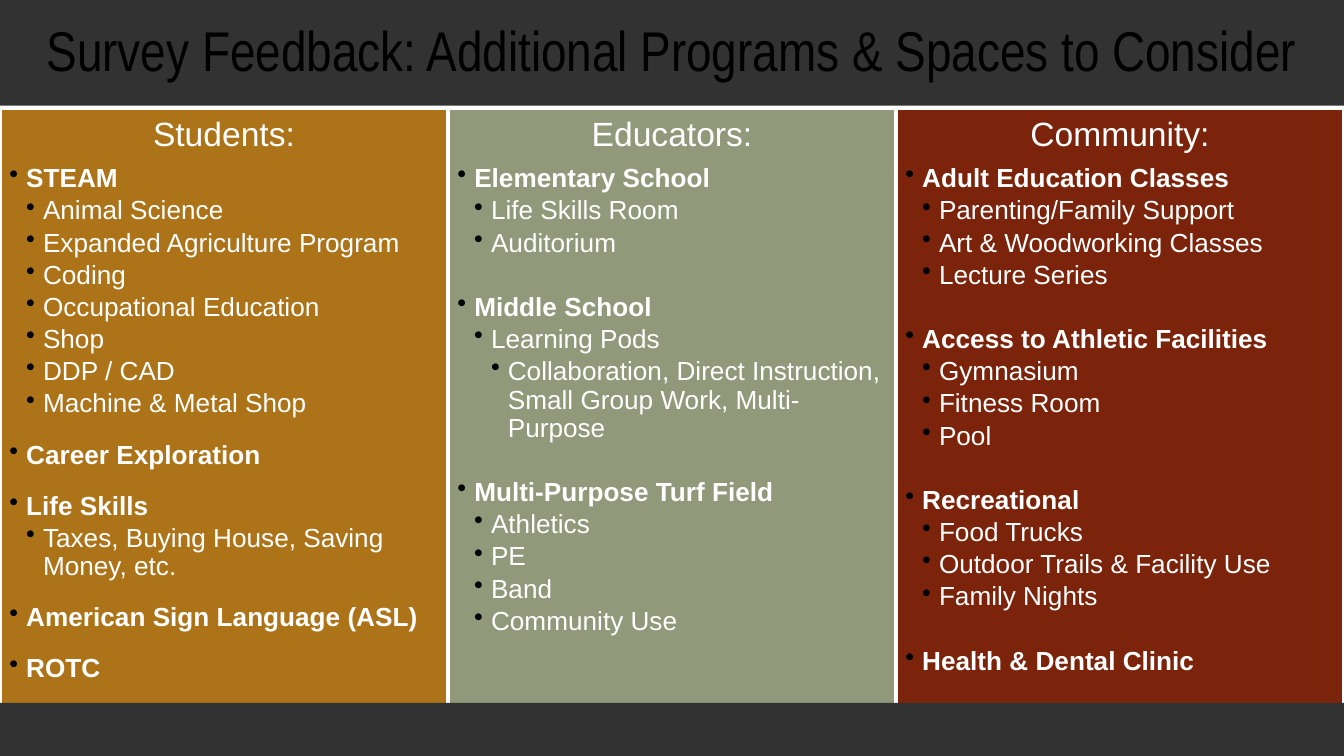
"""Build the survey feedback slide with one column of ideas per audience."""
from dataclasses import dataclass

from lxml import etree
from pptx import Presentation, util as u
from pptx.dml.color import RGBColor
from pptx.enum import shapes, text
from pptx.oxml.ns import qn


@dataclass(frozen=True)
class Theme:
    bar: str = "323232"
    ink: str = "000000"
    light: str = "FFFFFF"
    title_font: str = "Arial Narrow"
    body_font: str = "Arial"
    title_size: float = 30
    heading_size: float = 18
    body_size: float = 14
    tight: float = 0.9
    loose: float = 1.5
    heading_after: float = 0.35
    item_after: float = 0.15
    group_gap: float = 17.2
    indent: float = 0.125


@dataclass(frozen=True)
class Item:
    label: str
    level: int = 2
    spacing: float = 0.9
    before: float = 0


@dataclass(frozen=True)
class Column:
    heading: str
    fill: str
    items: list[Item]


THEME = Theme()
WIDTH, HEIGHT = u.Inches(10), u.Inches(5.625)
ROWS = 100


def topic(label: str, *details: str, spacing: float = THEME.tight, before: float = 0) -> list[Item]:
    """Return a bold topic followed by its details."""
    return [Item(label, 1, spacing, before), *(Item(d) for d in details)]


def spaced(label: str, *details: str) -> list[Item]:
    """Return a topic set in loose line spacing."""
    return topic(label, *details, spacing=THEME.loose)


def apart(label: str, *details: str) -> list[Item]:
    """Return a topic set a full line below the previous one."""
    return topic(label, *details, before=THEME.group_gap)


COLUMNS = [
    Column("Students:", "AD7318", [
        *topic("STEAM", "Animal Science", "Expanded Agriculture Program", "Coding",
               "Occupational Education", "Shop", "DDP / CAD", "Machine & Metal Shop"),
        *spaced("Career Exploration"),
        *spaced("Life Skills", "Taxes, Buying House, Saving Money, etc."),
        *spaced("American Sign Language (ASL)"),
        *spaced("ROTC"),
    ]),
    Column("Educators:", "92987A", [
        *topic("Elementary School", "Life Skills Room", "Auditorium"),
        *apart("Middle School", "Learning Pods"),
        Item("Collaboration, Direct Instruction, Small Group Work, Multi-Purpose", 3),
        *apart("Multi-Purpose Turf Field", "Athletics", "PE", "Band", "Community Use"),
    ]),
    Column("Community:", "7C240B", [
        *topic("Adult Education Classes", "Parenting/Family Support",
               "Art & Woodworking Classes", "Lecture Series"),
        *apart("Access to Athletic Facilities", "Gymnasium", "Fitness Room", "Pool"),
        *apart("Recreational", "Food Trucks", "Outdoor Trails & Facility Use", "Family Nights"),
        *apart("Health & Dental Clinic"),
    ]),
]


def add_panel(s, col: int, cols: int, row: float, rows: float, fill: str,
              inset: float = 0, line: str | None = None):
    """Add a filled rectangle on a grid of columns and rows."""
    sp = s.shapes.add_shape(shapes.MSO_SHAPE.RECTANGLE, int(WIDTH * col / cols),
                            int(HEIGHT * row / ROWS), int(WIDTH / cols), int(HEIGHT * rows / ROWS))
    sp.shadow.inherit = False
    sp.fill.solid()
    sp.fill.fore_color.rgb = RGBColor.from_string(fill)
    if line:
        sp.line.color.rgb = RGBColor.from_string(line)
        sp.line.width = u.Pt(2)
    else:
        sp.line.fill.background()
    tf = sp.text_frame
    tf.word_wrap = True
    tf.margin_left = tf.margin_right = tf.margin_top = tf.margin_bottom = u.Inches(inset)
    return sp


def style(p, label: str, size: float, color: str, font: str, after: float,
          align=text.PP_ALIGN.CENTER, spacing: float = THEME.tight, bold: bool = False) -> None:
    """Fill a paragraph and set its type and spacing."""
    p.text = label
    p.alignment = align
    p.line_spacing = spacing
    p.space_after = u.Pt(round(size * after, 1))
    p.font.size = u.Pt(size)
    p.font.name = font
    p.font.bold = bold
    p.font.color.rgb = RGBColor.from_string(color)


def add_bullet(p, level: int) -> None:
    """Give a paragraph a hanging bullet at its level."""
    p.level = level
    pPr = p._p.get_or_add_pPr()
    step = u.Inches(THEME.indent)
    pPr.set("marL", str(step * level))
    pPr.set("indent", str(-step))
    color = etree.Element(qn("a:buClr"))
    etree.SubElement(color, qn("a:srgbClr"), val=THEME.ink)
    char = etree.Element(qn("a:buChar"), char="•")
    mark = pPr.find(qn("a:defRPr"))
    mark.addprevious(color)
    mark.addprevious(char)


def add_column(s, index: int, column: Column) -> None:
    """Draw one audience column with its heading and bulleted items."""
    sp = add_panel(s, index, len(COLUMNS), 14.25, 84.25, column.fill, 0.07, THEME.light)
    tf = sp.text_frame
    tf.vertical_anchor = text.MSO_ANCHOR.TOP
    style(tf.paragraphs[0], column.heading, THEME.heading_size, THEME.light,
          THEME.body_font, THEME.heading_after)
    for item in column.items:
        p = tf.add_paragraph()
        style(p, item.label, THEME.body_size, THEME.light, THEME.body_font, THEME.item_after,
              text.PP_ALIGN.LEFT, item.spacing, item.level == 1)
        p.space_before = u.Pt(item.before)
        add_bullet(p, item.level)


def main() -> None:
    """Assemble and save the slide."""
    prs = Presentation()
    prs.slide_width, prs.slide_height = WIDTH, HEIGHT
    s = prs.slides.add_slide(prs.slide_layouts[6])
    tf = add_panel(s, 0, 1, 0, 14, THEME.bar, 0.12).text_frame
    tf.vertical_anchor = text.MSO_ANCHOR.MIDDLE
    style(tf.paragraphs[0], "Survey Feedback: Additional Programs & Spaces to Consider",
          THEME.title_size, THEME.ink, THEME.title_font, THEME.heading_after)
    for index, column in enumerate(COLUMNS):
        add_column(s, index, column)
    add_panel(s, 0, 1, 93, 7, THEME.bar)
    prs.save("out.pptx")


if __name__ == "__main__":
    main()
